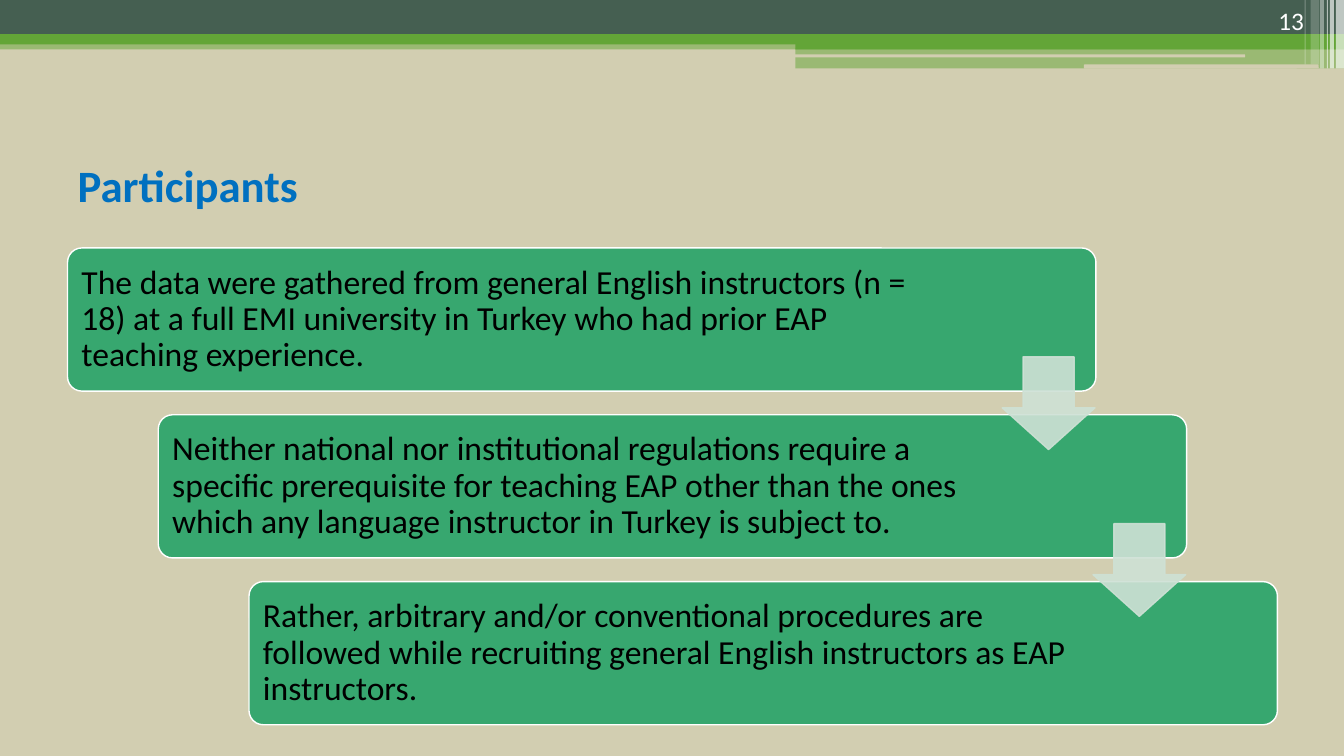
from dataclasses import dataclass

from lxml import etree
from pptx import Presentation
from pptx import util as u
from pptx.dml.color import RGBColor
from pptx.enum import shapes, text
from pptx.oxml.ns import qn

EMU_PER_PX = 9144  # 100 px to the inch


@dataclass(frozen=True)
class Theme:
    font: str = "Calibri"
    sand: str = "D2CEB1"
    slate: str = "455F51"
    leaf: str = "63A537"
    white: str = "FFFFFF"
    black: str = "000000"
    heading: str = "0070C0"
    card: str = "37A76F"
    arrow: str = "CEE1D5"
    heading_size: int = 32
    body_size: int = 24
    number_size: int = 18


THEME = Theme()
RECT = shapes.MSO_SHAPE.RECTANGLE
ROUNDED = shapes.MSO_SHAPE.ROUNDED_RECTANGLE
DOWN_ARROW = shapes.MSO_SHAPE.DOWN_ARROW

# Header bands: left, top, width, height, colour, opacity %
BANDS = [
    (0, 40, 1333, 9, THEME.leaf, 50),
    (0, 0, 1333, 34, THEME.slate, 100),
    (0, 34, 1333, 10, THEME.leaf, 100),
    (789, 39, 544, 10, THEME.leaf, 100),
    (789, 48, 544, 20, THEME.leaf, 50),
]
# Thin sand stripes over the bands: left, top, width, height
STRIPES = [(788, 54, 447, 3), (1075, 64, 233, 4)]
# White bars at the right edge: left, width, height, opacity %
EDGE_BARS = [
    (1325, 8, 68, 65),
    (1319, 4, 68, 65),
    (1316, 1, 68, 60),
    (1309, 4, 68, 40),
    (1300, 8, 64, 20),
    (1294, 1, 64, 30),
]

# Each step: wording and width of its text
STEPS = [
    ("The data were gathered from general English instructors (n = 18) at a full EMI "
     "university in Turkey who had prior EAP teaching experience.", 867),
    ("Neither national nor institutional regulations require a specific prerequisite for "
     "teaching EAP other than the ones which any language instructor in Turkey is "
     "subject to.", 829),
    ("Rather, arbitrary and/or conventional procedures are followed while recruiting "
     "general English instructors as EAP instructors.", 829),
]
CARD_LEFT, CARD_TOP, CARD_WIDTH, CARD_HEIGHT = 67, 246, 1020, 142
STEP_RIGHT, STEP_DOWN = 90, 165.5
TEXT_OFFSET = 4
ARROW_LEFT, ARROW_TOP, ARROW_SIZE = 994, 354, 92


def px(*lengths):
    return [u.Emu(round(length * EMU_PER_PX)) for length in lengths]


def rgb(colour):
    return RGBColor.from_string(colour)


def add_block(slide, kind, box, colour, opacity=100, line=None, adjust=()):
    block = slide.shapes.add_shape(kind, *px(*box))
    block.shadow.inherit = False
    for index, value in enumerate(adjust):
        block.adjustments[index] = value
    block.fill.solid()
    block.fill.fore_color.rgb = rgb(colour)
    if line:
        block.line.color.rgb = rgb(line)
        block.line.width = u.Pt(1)
    else:
        block.line.fill.background()
    if opacity < 100:
        for tint in block._element.spPr.iter(qn("a:srgbClr")):
            etree.SubElement(tint, qn("a:alpha")).set("val", str(opacity * 1000))


def write(frame, wording, size, colour, anchor, align=text.PP_ALIGN.LEFT,
          bold=False, spacing=None):
    frame.word_wrap = True
    frame.auto_size = text.MSO_AUTO_SIZE.NONE
    frame.vertical_anchor = anchor
    paragraph = frame.paragraphs[0]
    paragraph.alignment = align
    if spacing:
        paragraph.line_spacing = spacing
    run = paragraph.add_run()
    run.text = wording
    run.font.name = THEME.font
    run.font.size = u.Pt(size)
    run.font.bold = bold
    run.font.color.rgb = rgb(colour)


def add_header(slide):
    for *box, colour, opacity in BANDS:
        add_block(slide, RECT, box, colour, opacity)
    for stripe in STRIPES:
        add_block(slide, ROUNDED, stripe, THEME.sand)
    for left, width, height, opacity in EDGE_BARS:
        add_block(slide, RECT, (left, 0, width, height), THEME.white, opacity)


def add_heading(slide, wording):
    heading = slide.shapes.title
    heading.left, heading.top, heading.width, heading.height = px(67, 125, 1200, 117)
    write(heading.text_frame, wording, THEME.heading_size, THEME.heading,
          text.MSO_ANCHOR.MIDDLE, bold=True)


def add_page_number(slide, number):
    page = slide.shapes.add_textbox(*px(1192, 0, 111, 40))
    write(page.text_frame, number, THEME.number_size, THEME.white,
          text.MSO_ANCHOR.BOTTOM, text.PP_ALIGN.RIGHT)


def add_step(slide, index, wording, text_width):
    left = CARD_LEFT + index * STEP_RIGHT
    top = CARD_TOP + index * STEP_DOWN
    add_block(slide, ROUNDED, (left, top, CARD_WIDTH, CARD_HEIGHT), THEME.card,
              line=THEME.white, adjust=(0.1,))
    body = slide.shapes.add_textbox(*px(left + TEXT_OFFSET, top + TEXT_OFFSET,
                                        text_width, CARD_HEIGHT - 2 * TEXT_OFFSET))
    frame = body.text_frame
    frame.margin_left, frame.margin_top, frame.margin_right, frame.margin_bottom = px(
        10, 10, 10, 10)
    write(frame, wording, THEME.body_size, THEME.black, text.MSO_ANCHOR.MIDDLE,
          spacing=0.9)


def add_step_arrow(slide, index):
    box = (ARROW_LEFT + index * STEP_RIGHT, ARROW_TOP + index * STEP_DOWN,
           ARROW_SIZE, ARROW_SIZE)
    # The first adjustment is the shaft width, the second the head length
    add_block(slide, DOWN_ARROW, box, THEME.arrow, 90, THEME.arrow, (0.55, 0.45))


def main():
    deck = Presentation()
    deck.slide_width, deck.slide_height = px(1333, 750)
    slide = deck.slides.add_slide(deck.slide_layouts[5])
    slide.background.fill.solid()
    slide.background.fill.fore_color.rgb = rgb(THEME.sand)

    # Header and heading
    add_header(slide)
    add_heading(slide, "Participants")
    add_page_number(slide, "13")

    # Staircase of cards, then the arrows between them
    for index, (wording, text_width) in enumerate(STEPS):
        add_step(slide, index, wording, text_width)
    for index in range(len(STEPS) - 1):
        add_step_arrow(slide, index)

    deck.save("out.pptx")


if __name__ == "__main__":
    main()
